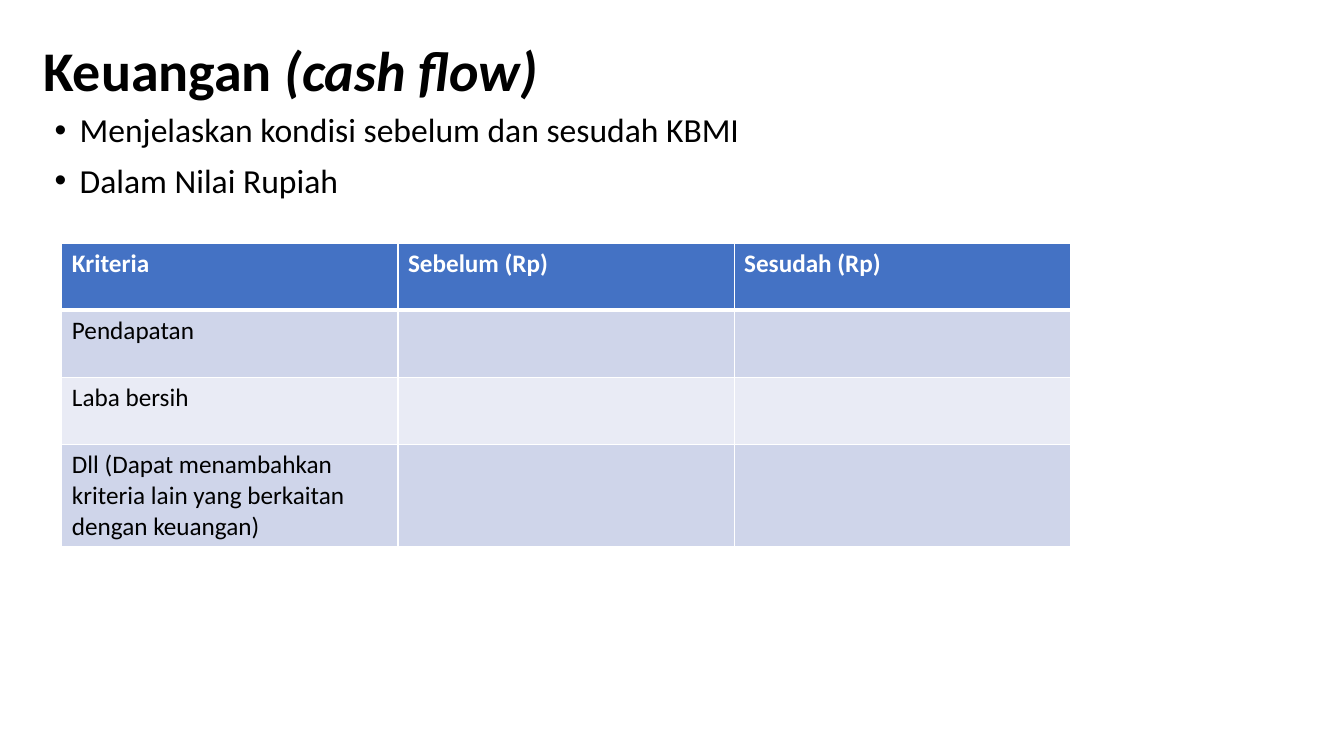
from dataclasses import dataclass

from lxml import etree
from pptx import Presentation
from pptx.dml.color import RGBColor
from pptx.enum import text
from pptx.oxml.ns import qn
from pptx.util import Cm, Pt

TITLE = [("Keuangan ", False), ("(cash flow)", True)]
POINTS = ["Menjelaskan kondisi sebelum dan sesudah KBMI", "Dalam Nilai Rupiah"]
ROWS = [
    ("Kriteria", "Sebelum (Rp)", "Sesudah (Rp)"),
    ("Pendapatan", "", ""),
    ("Laba bersih", "", ""),
    ("Dll (Dapat menambahkan kriteria lain yang berkaitan dengan keuangan)", "", ""),
]


@dataclass(frozen=True)
class Theme:
    font: str = "Calibri"
    ink: str = "000000"
    paper: str = "FFFFFF"
    header: str = "4472C4"
    bands: tuple = ("E9EBF5", "CFD5EA")
    title_size: int = 40
    body_size: int = 24
    table_size: int = 18


THEME = Theme()


def place(shape, left, top, width, height):
    shape.left, shape.top = Cm(left), Cm(top)
    shape.width, shape.height = Cm(width), Cm(height)


def add_run(paragraph, wording, size, color=THEME.ink, bold=False, italic=False):
    run = paragraph.add_run()
    run.text = wording
    font = run.font
    font.name, font.size = THEME.font, Pt(size)
    font.bold, font.italic = bold, italic
    font.color.rgb = RGBColor.from_string(color)


def add_border(properties, side, width):
    line = etree.SubElement(properties, qn(f"a:ln{side}"), w=str(Pt(width)))
    fill = etree.SubElement(line, qn("a:solidFill"))
    etree.SubElement(fill, qn("a:srgbClr"), val=THEME.paper)


def fill_title(shape):
    place(shape, 0.84, 0, 29.21, 3.68)
    frame = shape.text_frame
    frame.auto_size = text.MSO_AUTO_SIZE.NONE
    frame.vertical_anchor = text.MSO_ANCHOR.MIDDLE
    paragraph = frame.paragraphs[0]
    paragraph.alignment = text.PP_ALIGN.LEFT
    paragraph.line_spacing = 0.9
    for wording, italic in TITLE:
        add_run(paragraph, wording, THEME.title_size, bold=True, italic=italic)


def fill_points(shape):
    place(shape, 1.12, 2.74, 29.21, 12.09)
    frame = shape.text_frame
    frame.auto_size = text.MSO_AUTO_SIZE.NONE
    for index, wording in enumerate(POINTS):
        paragraph = frame.add_paragraph() if index else frame.paragraphs[0]
        paragraph.line_spacing = 0.9
        paragraph.space_before = Pt(10)
        properties = paragraph._p.get_or_add_pPr()
        properties.set("marL", str(Pt(18)))
        properties.set("indent", str(-Pt(18)))
        etree.SubElement(properties, qn("a:buFont"), typeface="Arial")
        etree.SubElement(properties, qn("a:buChar"), char="•")
        add_run(paragraph, wording, THEME.body_size)


def add_finance_table(slide):
    row_height, column_width = Cm(1.69), Cm(8.47)
    column_count = len(ROWS[0])
    table = slide.shapes.add_table(
        len(ROWS), column_count, Cm(1.56), Cm(6.13),
        column_width * column_count, row_height * len(ROWS),
    ).table
    for row_index, row in enumerate(ROWS):
        is_header = row_index == 0
        background = THEME.header if is_header else THEME.bands[row_index % 2]
        color = THEME.paper if is_header else THEME.ink
        for column_index, wording in enumerate(row):
            cell = table.cell(row_index, column_index)
            properties = cell._tc.get_or_add_tcPr()
            for side in "LRTB":
                thick = (row_index, side) in ((0, "B"), (1, "T"))
                add_border(properties, side, 3 if thick else 1)
            cell.fill.solid()
            cell.fill.fore_color.rgb = RGBColor.from_string(background)
            if wording:
                add_run(cell.text_frame.paragraphs[0], wording,
                        THEME.table_size, color, bold=is_header)


def main():
    presentation = Presentation()
    presentation.slide_width, presentation.slide_height = Cm(33.87), Cm(19.05)
    slide = presentation.slides.add_slide(presentation.slide_layouts[1])
    fill_title(slide.shapes.title)
    fill_points(slide.placeholders[1])
    add_finance_table(slide)
    presentation.save("out.pptx")


if __name__ == "__main__":
    main()
